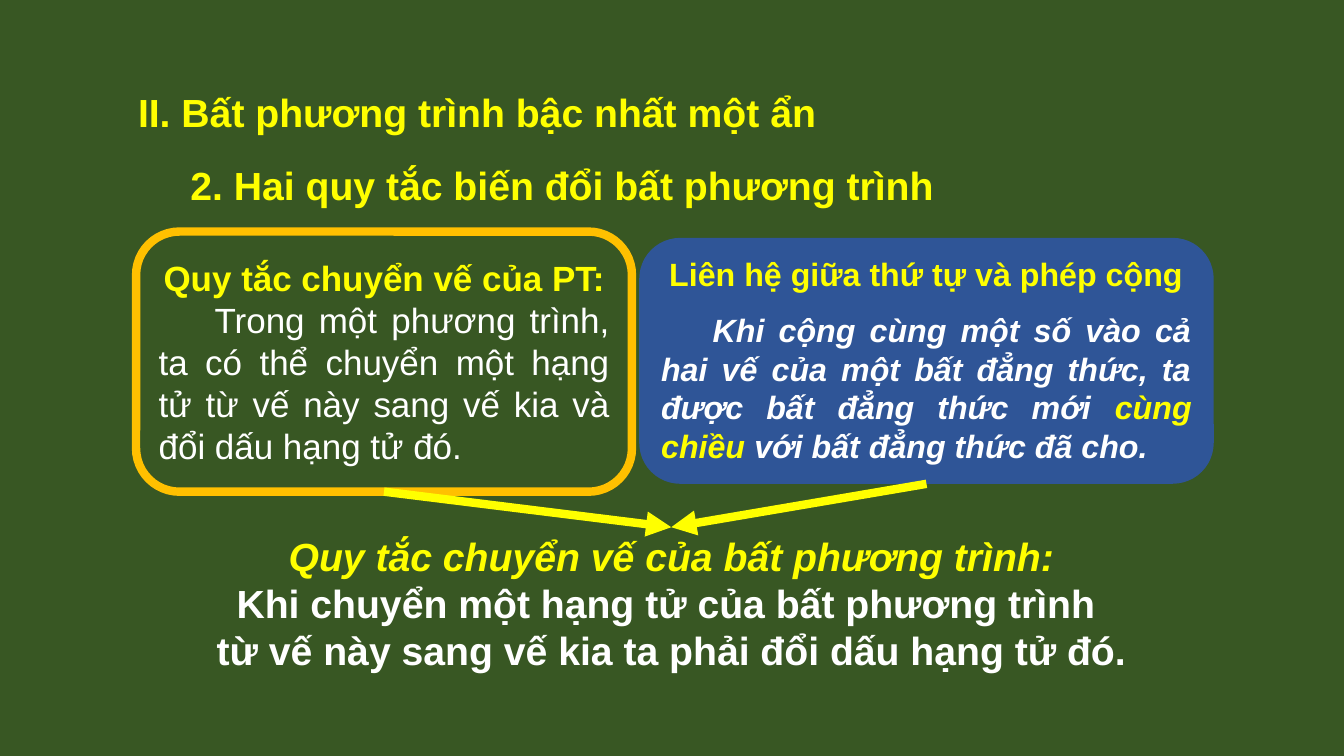
"""Build a slide on the transposition rule for linear inequalities."""
from pptx import Presentation
from pptx.dml.color import RGBColor
from pptx.enum import shapes, text
from pptx.oxml import parse_xml
from pptx.oxml import ns
from pptx.util import Pt

GREEN, YELLOW, WHITE, ORANGE, BLUE = "385723", "FFFF00", "FFFFFF", "FFC000", "2F5597"
LEFT, CENTER, JUSTIFY = text.PP_ALIGN.LEFT, text.PP_ALIGN.CENTER, text.PP_ALIGN.JUSTIFY
TOP, MIDDLE = text.MSO_ANCHOR.TOP, text.MSO_ANCHOR.MIDDLE

HEADING = [(LEFT, [("II. Bất phương trình bậc nhất một ẩn", YELLOW, "b")])]
SUBHEADING = [(LEFT, [("2. Hai quy tắc biến đổi bất phương trình", YELLOW, "b")])]
EQUATION_RULE = [
    (CENTER, [("Quy tắc chuyển vế của PT:", YELLOW, "b")]),
    (JUSTIFY, [("Trong một phương trình, ta có thể chuyển một hạng tử "
                "từ vế này sang vế kia và đổi dấu hạng tử đó.", WHITE, "")]),
]
ORDER_RULE = [
    (CENTER, [("Liên hệ giữa thứ tự và phép cộng", YELLOW, "b")]),
    (JUSTIFY, [("Khi cộng cùng một số vào cả hai vế của một bất đẳng thức, "
                "ta được bất đẳng thức mới ", WHITE, "bi"),
               ("cùng chiều ", YELLOW, "bi"),
               ("với bất đẳng thức đã cho.", WHITE, "bi")]),
]
CONCLUSION = [
    (CENTER, [("Quy tắc chuyển vế của bất phương trình:", YELLOW, "bi")]),
    (CENTER, [("Khi chuyển một hạng tử của bất phương trình ", WHITE, "b")]),
    (CENTER, [("từ vế này sang vế kia ta phải đổi dấu hạng tử đó.", WHITE, "b")]),
]


def color(value):
    return RGBColor.from_string(value)


def write(part, paragraphs, size, anchor=TOP, wrap=True, gap=0):
    frame = part.text_frame
    frame.auto_size = text.MSO_AUTO_SIZE.NONE
    frame.word_wrap = wrap
    frame.vertical_anchor = anchor
    for index, (alignment, runs) in enumerate(paragraphs):
        paragraph = frame.add_paragraph() if index else frame.paragraphs[0]
        paragraph.alignment = alignment
        paragraph.space_before = paragraph.space_after = Pt(gap)
        if alignment == JUSTIFY:
            paragraph._p.get_or_add_pPr().set("indent", str(Pt(size * 1.6)))
        for words, ink, style in runs:
            run = paragraph.add_run()
            run.text = words
            run.font.name = "Arial"
            run.font.size = Pt(size)
            run.font.color.rgb = color(ink)
            run.font.bold = "b" in style
            run.font.italic = "i" in style


def add_box(slide, bounds, fill=None, outline=None):
    box = slide.shapes.add_shape(shapes.MSO_SHAPE.ROUNDED_RECTANGLE, *map(Pt, bounds))
    box.shadow.inherit = False
    if fill:
        box.fill.solid()
        box.fill.fore_color.rgb = color(fill)
    else:
        box.fill.background()
    if outline:
        box.line.color.rgb = color(outline)
        box.line.width = Pt(6)
    else:
        box.line.fill.background()
    return box


def add_arrow(slide, source, target):
    arrow = slide.shapes.add_connector(shapes.MSO_CONNECTOR.STRAIGHT, 0, 0, 0, 0)
    arrow.begin_connect(source, 2)
    arrow.end_connect(target, 0)
    arrow.line.color.rgb = color(YELLOW)
    arrow.line.width = Pt(6)
    arrow.line._get_or_add_ln().append(
        parse_xml(f'<a:tailEnd {ns.nsdecls("a")} type="triangle"/>'))
    arrow._element.spPr.append(parse_xml(f'<a:effectLst {ns.nsdecls("a")}/>'))


def main():
    deck = Presentation()
    deck.slide_width, deck.slide_height = Pt(960), Pt(540)
    slide = deck.slides.add_slide(deck.slide_layouts[5])
    slide.background.fill.solid()
    slide.background.fill.fore_color.rgb = color(GREEN)

    heading = slide.shapes.title
    heading.left, heading.top, heading.width, heading.height = map(Pt, (91.4, 59.8, 504.7, 41))
    write(heading, HEADING, 28, wrap=False)
    subheading = slide.shapes.add_textbox(*map(Pt, (128.9, 111.6, 551.5, 41)))
    write(subheading, SUBHEADING, 28, wrap=False)

    equation_rule = add_box(slide, (97.2, 165.4, 354.2, 185.8), outline=ORANGE)
    write(equation_rule, EQUATION_RULE, 25, anchor=MIDDLE)
    order_rule = add_box(slide, (456.6, 169.9, 410.4, 175.7), fill=BLUE)
    write(order_rule, ORDER_RULE, 23, gap=6)
    conclusion = slide.shapes.add_textbox(*map(Pt, (91.4, 376.6, 776.2, 108.7)))
    write(conclusion, CONCLUSION, 28)

    for rule in (equation_rule, order_rule):
        add_arrow(slide, rule, conclusion)
    deck.save("out.pptx")


if __name__ == "__main__":
    main()
